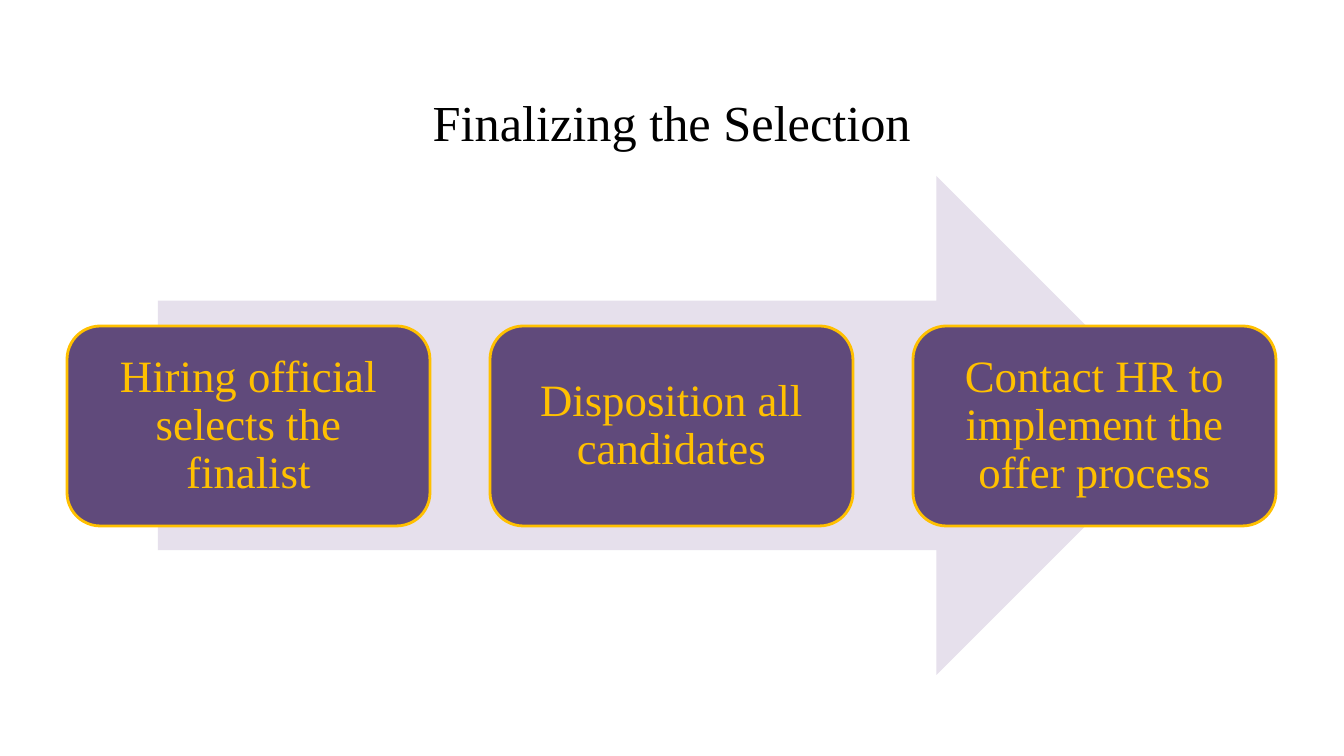
import pptx
import pptx.dml.color
import pptx.enum.shapes
import pptx.enum.text
import pptx.util

PX = 914400 / 100.8
FONT = "Times New Roman"
GOLD, PLUM, LILAC = "FFC000", "604A7B", "E6E0EC"
KIND = pptx.enum.shapes.MSO_SHAPE


def draw(text, kind=None, at=(0, 0, 0, 0), fill=None, line=None, size=32,
         color=GOLD, inset=13, spacing=0.9):
    """Add a preset shape, or a text box if kind is None, with centred text."""
    box = [round(n * PX) for n in at]
    if kind is None:
        shape = slide.shapes.add_textbox(*box)
    else:
        shape = slide.shapes.add_shape(kind, *box)
        shape.shadow.inherit = False
        shape.fill.solid()
        shape.fill.fore_color.rgb = pptx.dml.color.RGBColor.from_string(fill)
        if line:
            shape.line.color.rgb = pptx.dml.color.RGBColor.from_string(line)
            shape.line.width = pptx.util.Pt(2)
        else:
            shape.line.fill.background()
    if text:
        frame = shape.text_frame
        frame.word_wrap = True
        frame.vertical_anchor = pptx.enum.text.MSO_ANCHOR.MIDDLE
        frame.margin_left = frame.margin_right = round(inset * PX)
        frame.margin_top = frame.margin_bottom = round(inset * PX)
        para = frame.paragraphs[0]
        para.alignment = pptx.enum.text.PP_ALIGN.CENTER
        para.line_spacing = spacing
        run = para.add_run()
        run.text = text
        run.font.name = FONT
        run.font.size = pptx.util.Pt(size)
        run.font.color.rgb = pptx.dml.color.RGBColor.from_string(color)


deck = pptx.Presentation()
deck.slide_width = round(1344 * PX)
deck.slide_height = round(756 * PX)
slide = deck.slides.add_slide(deck.slide_layouts[6])

draw("Finalizing the Selection", at=(67, 28, 1210, 186), size=36,
     color="000000", inset=5, spacing=1.0)
draw("", KIND.RIGHT_ARROW, at=(158, 176, 1028, 499), fill=LILAC)

steps = [
    "Hiring official selects the finalist",
    "Disposition all candidates",
    "Contact HR to implement the offer process",
]
left, top, wide, high, gap = 67, 326, 363, 200, 60
for i, step in enumerate(steps):
    draw(step, KIND.ROUNDED_RECTANGLE, at=(left + i * (wide + gap), top, wide, high),
         fill=PLUM, line=GOLD)

deck.save("out.pptx")
